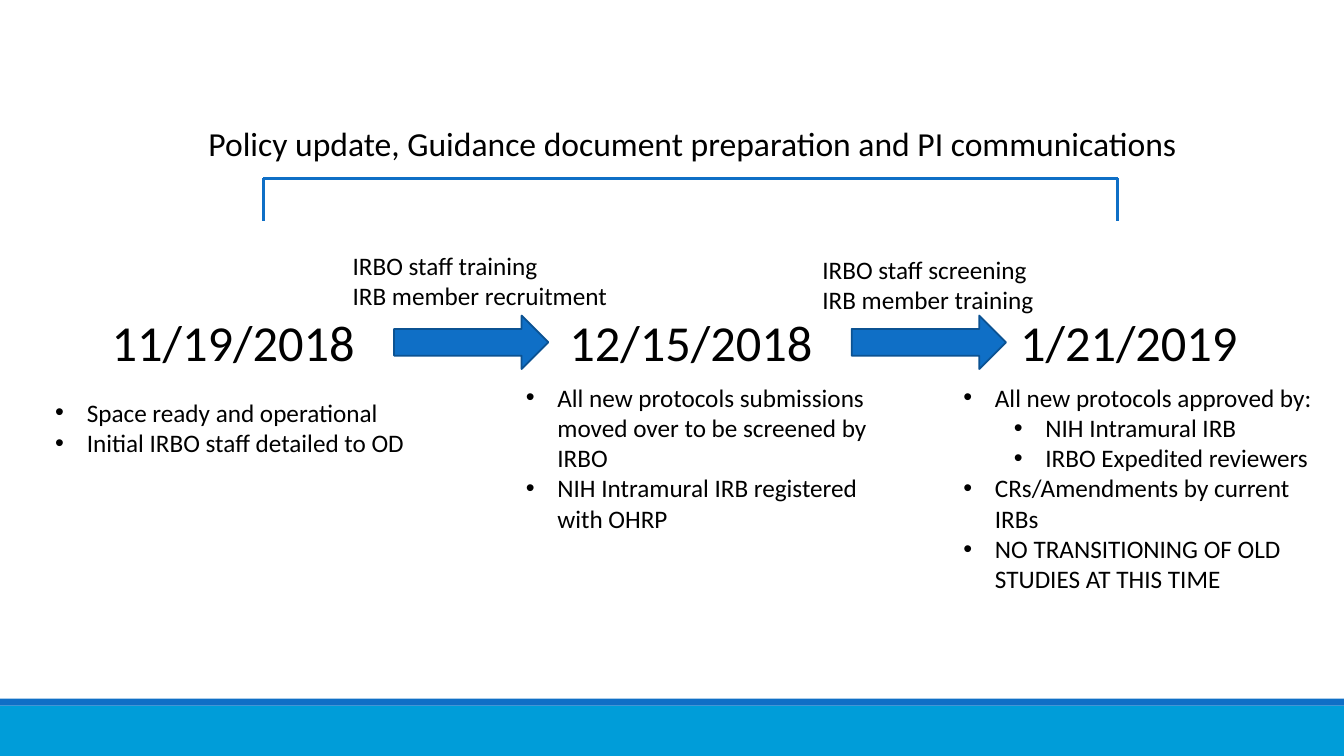
from pptx import Presentation
from pptx.dml.color import RGBColor
from pptx.enum.shapes import MSO_CONNECTOR, MSO_SHAPE
from pptx.enum.text import PP_ALIGN
from pptx.oxml.ns import qn
from pptx.util import Pt
from lxml import etree

RECTANGLE = MSO_SHAPE.RECTANGLE
RIGHT_ARROW = MSO_SHAPE.RIGHT_ARROW
STRAIGHT = MSO_CONNECTOR.STRAIGHT
LEFT, CENTER = PP_ALIGN.LEFT, PP_ALIGN.CENTER

WIDTH, HEIGHT = 960, 540
COLORS = {"text": "000000", "blue": "0F6FC6", "outline": "0B5292", "footer": "009DD9"}
FONT = "Calibri"
BULLET_INDENT = 22.5
LEVEL_INDENT = 36

DATE_TOP = 218.9
ARROW_LEFT, ARROW_STEP = 281.5, 326.9

# date, date left, date width, list left, list top, list height, list items as (level, text)
MILESTONES = [
    ("11/19/2018", 66.2, 200.9, 32.4, 280.1, 51.1, [
        (0, "Space ready and operational"),
        (0, "Initial IRBO staff detailed to OD"),
    ]),
    ("12/15/2018", 393.1, 200.9, 368.6, 269.3, 116.6, [
        (0, "All new protocols submissions moved over to be screened by IRBO"),
        (0, "NIH Intramural IRB registered with OHRP"),
    ]),
    ("1/21/2019", 719.3, 174.2, 681.1, 269.3, 159.8, [
        (0, "All new protocols approved by:"),
        (1, "NIH Intramural IRB"),
        (1, "IRBO Expedited reviewers"),
        (0, "CRs/Amendments by current IRBs"),
        (0, "NO TRANSITIONING OF OLD STUDIES AT THIS TIME"),
    ]),
]

# left, top, width, lines of the label above each arrow
ARROW_LABELS = [
    (244.8, 175, 205.2, ["IRBO staff training", "IRB member recruitment"]),
    (580.3, 177.8, 167, ["IRBO staff screening", "IRB member training"]),
]


def color(name):
    return RGBColor.from_string(COLORS[name])


def add_bullet(paragraph, level):
    paragraph.level = level
    properties = paragraph._p.get_or_add_pPr()
    properties.set("marL", str(Pt(BULLET_INDENT + level * LEVEL_INDENT)))
    properties.set("indent", str(-Pt(BULLET_INDENT)))
    etree.SubElement(properties, qn("a:buFont"), typeface="Arial")
    etree.SubElement(properties, qn("a:buChar"), char="•")


class TimelineSlide:
    def __init__(self, presentation):
        self.slide = presentation.slides.add_slide(presentation.slide_layouts[6])
        self.shapes = self.slide.shapes

    def shape(self, kind, left, top, width, height, fill, outline=None):
        shape = self.shapes.add_shape(kind, Pt(left), Pt(top), Pt(width), Pt(height))
        shape.shadow.inherit = False
        shape.fill.solid()
        shape.fill.fore_color.rgb = color(fill)
        if outline:
            shape.line.color.rgb = color(outline)
            shape.line.width = Pt(1.25)
        else:
            shape.line.fill.background()

    def line(self, start, end):
        connector = self.shapes.add_connector(STRAIGHT, *map(Pt, start + end))
        connector.line.color.rgb = color("blue")
        connector.line.width = Pt(2.25)
        etree.SubElement(connector._element.spPr, qn("a:effectLst"))

    def text(self, items, left, top, width, height, size=18, align=LEFT,
             bullets=False, wrap=True):
        """Add a text box with one paragraph for each (level, text) item."""
        box = self.shapes.add_textbox(Pt(left), Pt(top), Pt(width), Pt(height))
        frame = box.text_frame
        frame.word_wrap = wrap
        for index, (level, content) in enumerate(items):
            paragraph = frame.add_paragraph() if index else frame.paragraphs[0]
            paragraph.alignment = align
            if bullets:
                add_bullet(paragraph, level)
            run = paragraph.add_run()
            run.text = content
            run.font.name = FONT
            run.font.size = Pt(size)
            run.font.color.rgb = color("text")


def main():
    presentation = Presentation()
    presentation.slide_width, presentation.slide_height = Pt(WIDTH), Pt(HEIGHT)
    timeline = TimelineSlide(presentation)

    timeline.shape(RECTANGLE, 0, 504, WIDTH, 36, "footer")
    timeline.shape(RECTANGLE, 0, 499, WIDTH, 5, "blue")

    for date, date_left, date_width, left, top, height, items in MILESTONES:
        timeline.text([(0, date)], date_left, DATE_TOP, date_width, 51.1, size=36, align=CENTER)
        timeline.text(items, left, top, 268.6, height, bullets=True)

    for index, (left, top, width, lines) in enumerate(ARROW_LABELS):
        timeline.shape(RIGHT_ARROW, ARROW_LEFT + index * ARROW_STEP, 225.4, 110.2, 38.2,
                       "blue", outline="outline")
        timeline.text([(0, line) for line in lines], left, top, width, 51.1, wrap=False)

    bracket_left, bracket_right, bracket_top, bracket_bottom = 188, 798.5, 127.4, 157.7
    timeline.line((bracket_left, bracket_top), (bracket_right, bracket_top))
    for side in (bracket_left, bracket_right):
        timeline.line((side, bracket_top), (side, bracket_bottom))
    timeline.text([(0, "Policy update, Guidance document preparation and PI communications")],
                  141.8, 84, 722.2, 36.4, size=24, wrap=False)

    presentation.save("out.pptx")


if __name__ == "__main__":
    main()
